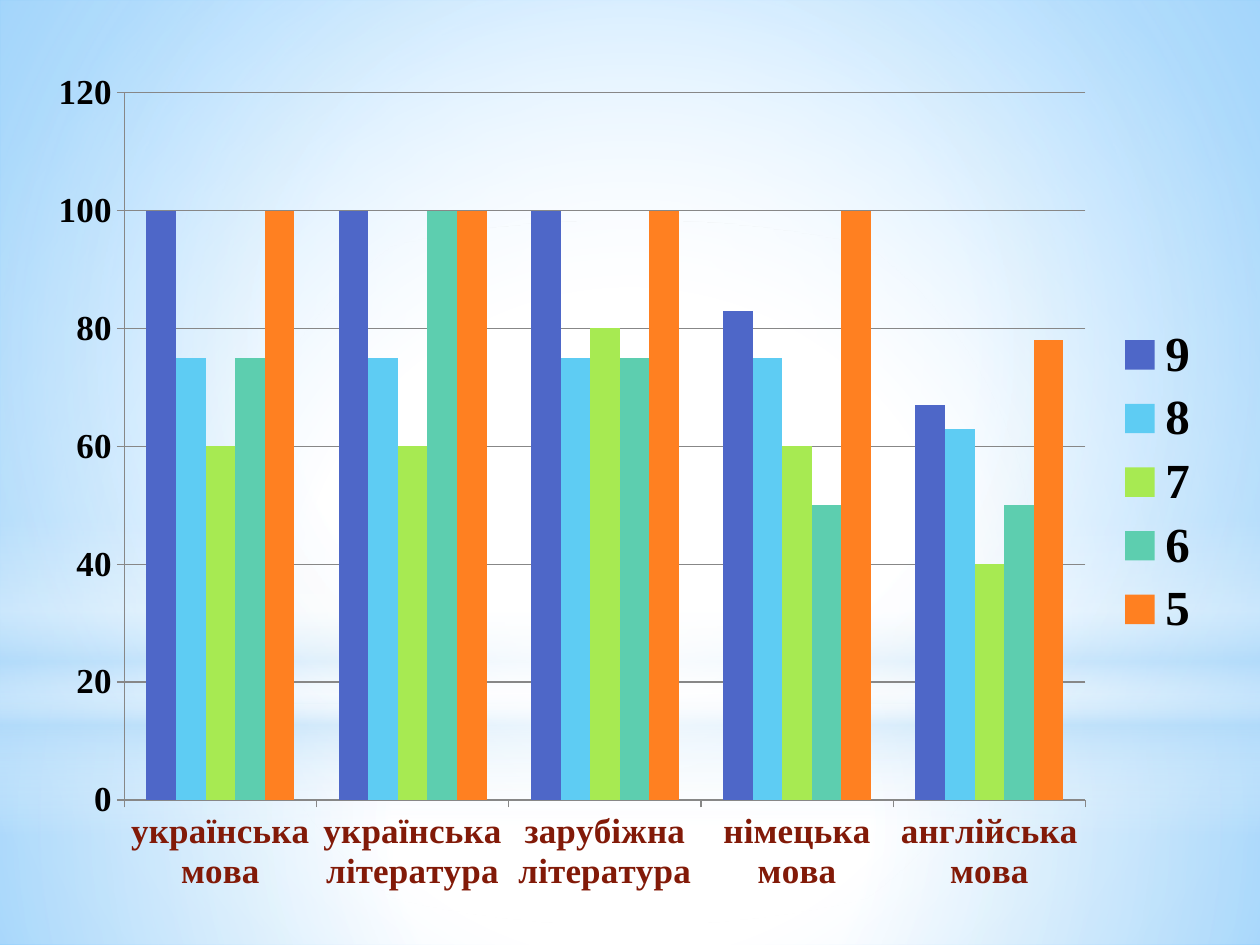
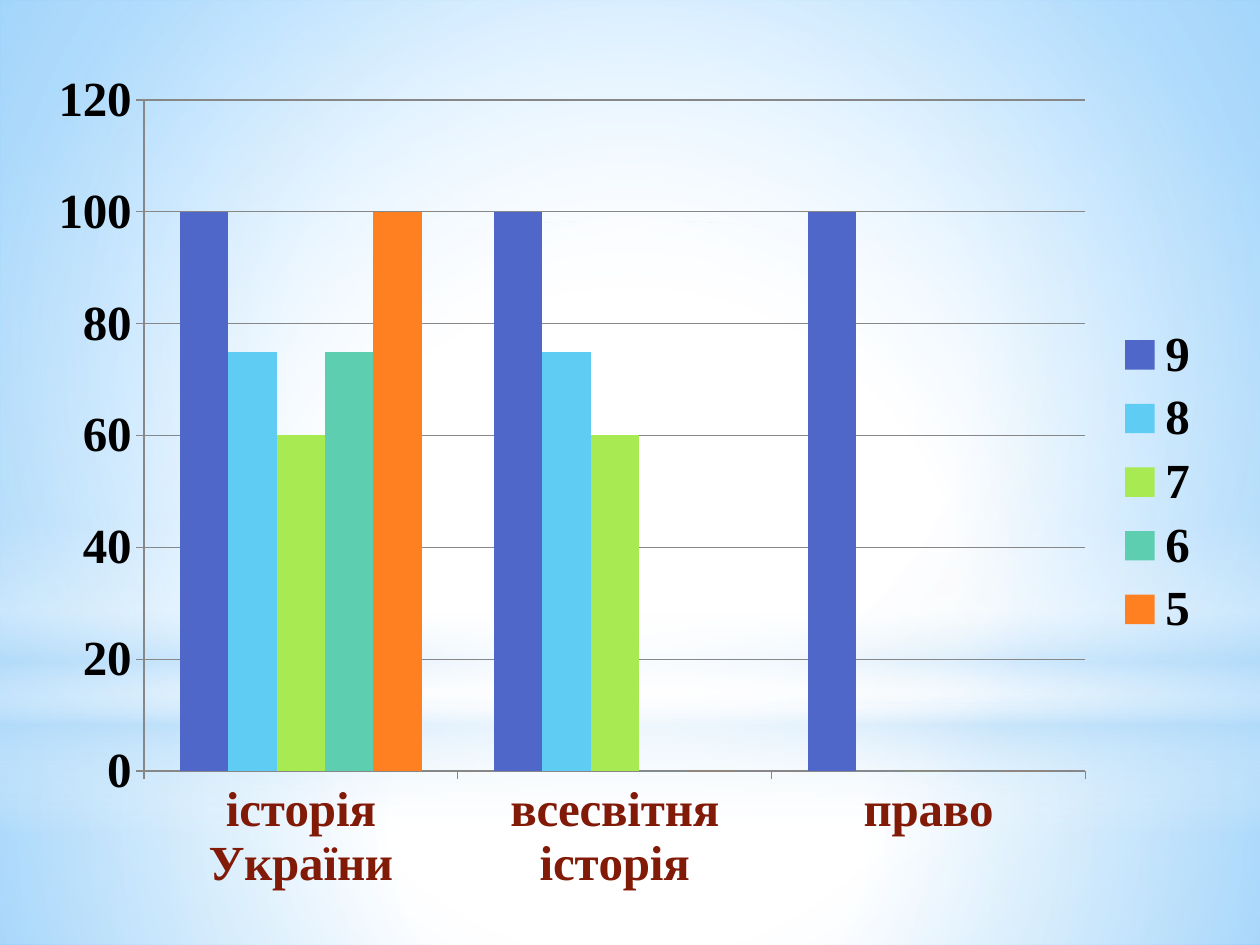
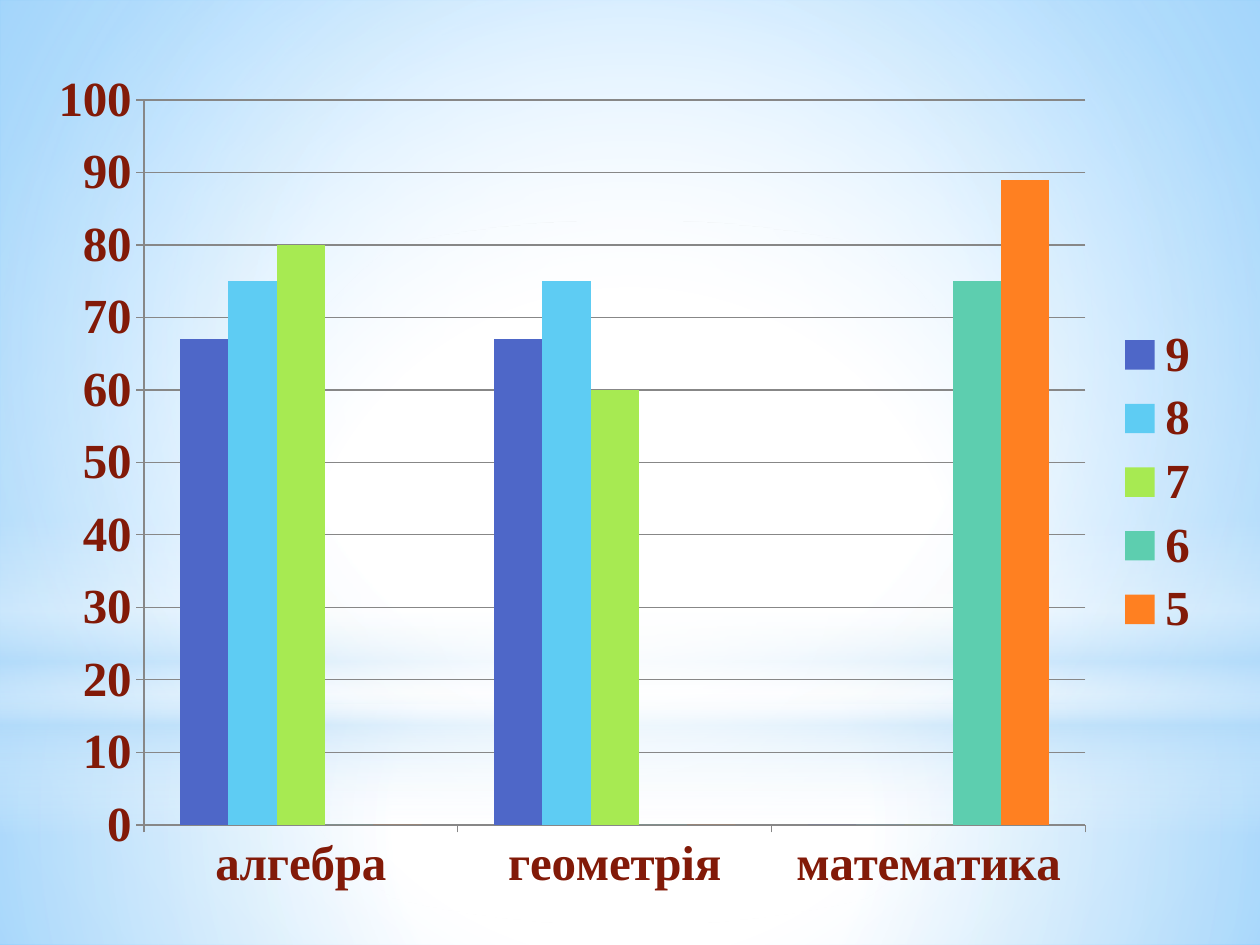
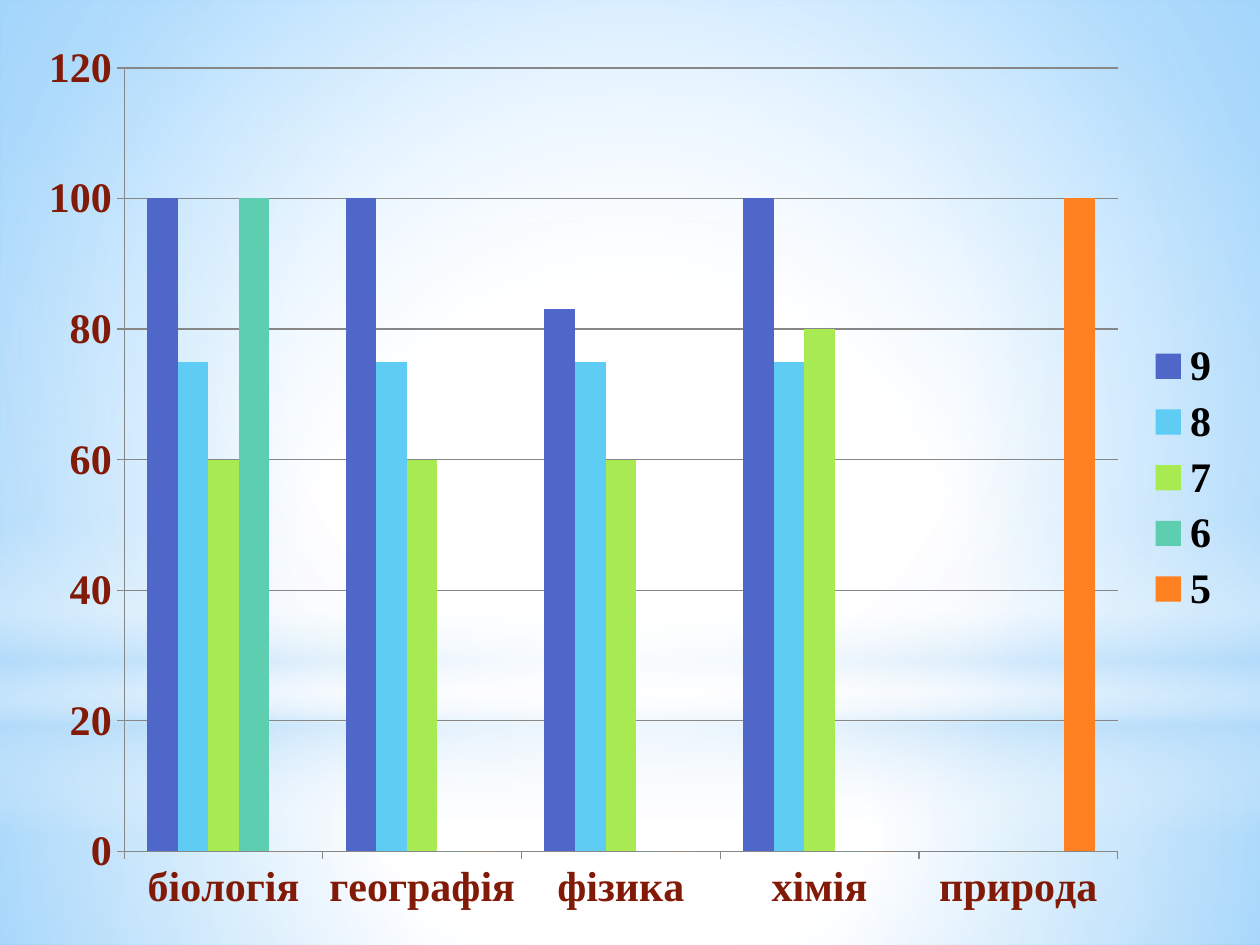
"""Build four slides of clustered column charts, one per group of school subjects."""
from dataclasses import dataclass

from pptx import Presentation
from pptx.chart.data import CategoryChartData
from pptx.dml.color import RGBColor
from pptx.enum.chart import XL_CHART_TYPE, XL_LEGEND_POSITION, XL_TICK_MARK
from pptx.enum.shapes import MSO_SHAPE
from pptx.oxml import parse_xml
from pptx.oxml.ns import nsdecls, qn
from pptx.util import Pt


@dataclass(frozen=True)
class Theme:
    """Colours, font and type sizes shared by all slides."""

    white: str = "FFFFFF"
    sky: str = "63BCFF"
    haze: str = "B4DCFA"
    black: str = "000000"
    maroon: str = "821A08"
    rule: str = "878787"
    font: str = "Times New Roman"
    small: int = 20
    medium: int = 24
    large: int = 28


THEME = Theme()
SLIDE_SIZE = (720, 540)
CENTRE = (50, 50, 50, 50)
GRADES = {"9": "4E67C8", "8": "5ECCF3", "7": "A7EA52", "6": "5DCEAF", "5": "FF8021"}

BACKGROUND = {
    "stops": [(0, THEME.white, 100), (42, THEME.white, 100), (100, THEME.sky, 100)],
    "focus": (24, 44, 24, 12),
}
BANDS = [
    {"shape": MSO_SHAPE.RECTANGLE, "top": 402, "height": 138, "focus": CENTRE,
     "stops": [(0, THEME.white, 91), (37, THEME.white, 76), (100, THEME.haze, 79)]},
    {"shape": MSO_SHAPE.RECTANGLE, "top": 0, "height": 402, "focus": CENTRE,
     "stops": [(0, THEME.white, 89), (48, THEME.white, 62), (100, THEME.haze, 79)]},
    {"shape": MSO_SHAPE.RECTANGLE, "top": 297, "height": 180, "focus": None,
     "stops": [(0, THEME.white, 0), (29, THEME.white, 30), (45, THEME.haze, 40),
               (55, THEME.white, 26), (65, THEME.haze, 60), (100, THEME.white, 0)]},
    {"shape": MSO_SHAPE.OVAL, "top": 126, "height": 402, "focus": CENTRE,
     "stops": [(0, THEME.white, 100), (56, THEME.white, 0)]},
]

STANDARD_FRAME = (20, 32, 675, 487)
WIDE_FRAME = (14, 15, 692, 516)
CHARTS = [
    {
        "frame": STANDARD_FRAME,
        "category": (THEME.small, THEME.maroon),
        "value": (THEME.small, THEME.black),
        "legend": (THEME.large, THEME.black),
        "subjects": {
            "українська мова": (100, 75, 60, 75, 100),
            "українська література": (100, 75, 60, 100, 100),
            "зарубіжна література": (100, 75, 80, 75, 100),
            "німецька мова": (83, 75, 60, 50, 100),
            "англійська мова": (67, 63, 40, 50, 78),
        },
    },
    {
        "frame": STANDARD_FRAME,
        "category": (THEME.large, THEME.maroon),
        "value": (THEME.large, THEME.black),
        "legend": (THEME.large, THEME.black),
        "subjects": {
            "історія України": (100, 75, 60, 75, 100),
            "всесвітня історія": (100, 75, 60, 0, 0),
            "право": (100, 0, 0, 0, 0),
        },
    },
    {
        "frame": STANDARD_FRAME,
        "category": (THEME.large, THEME.maroon),
        "value": (THEME.large, THEME.maroon),
        "legend": (THEME.large, THEME.maroon),
        "subjects": {
            "алгебра": (67, 75, 80, 0, 0),
            "геометрія": (67, 75, 60, 0, 0),
            "математика": (0, 0, 0, 75, 89),
        },
    },
    {
        "frame": WIDE_FRAME,
        "category": (THEME.medium, THEME.maroon),
        "value": (THEME.medium, THEME.maroon),
        "legend": (THEME.medium, THEME.black),
        "subjects": {
            "біологія": (100, 75, 60, 100, 0),
            "географія": (100, 75, 60, 0, 0),
            "фізика": (83, 75, 60, 0, 0),
            "хімія": (100, 75, 80, 0, 0),
            "природа": (0, 0, 0, 0, 100),
        },
    },
]


def paint_gradient(fill, element, stops, focus):
    """Fill with a circular gradient, or a downward one when there is no focus."""
    fill.solid()
    stop_xml = "".join(
        f'<a:gs pos="{position * 1000}"><a:srgbClr val="{color}">'
        f'<a:alpha val="{opacity * 1000}"/></a:srgbClr></a:gs>'
        for position, color, opacity in stops
    )
    if focus:
        sides = " ".join(f'{side}="{inset * 1000}"' for side, inset in zip("ltrb", focus))
        direction = f'<a:path path="circle"><a:fillToRect {sides}/></a:path>'
    else:
        direction = '<a:lin ang="5400000" scaled="0"/>'
    gradient = parse_xml(
        f'<a:gradFill {nsdecls("a")} rotWithShape="1">'
        f"<a:gsLst>{stop_xml}</a:gsLst>{direction}</a:gradFill>"
    )
    solid = next(element.iter(qn("a:solidFill")))
    solid.getparent().replace(solid, gradient)


def decorate_master(deck, page):
    """Paint the background and move the bands from a page to the master."""
    master = deck.slide_master
    content = master.element.cSld
    paint_gradient(master.background.fill, content, **BACKGROUND)
    for order, band in enumerate(BANDS):
        box = page.shapes.add_shape(
            band["shape"], 0, Pt(band["top"]), deck.slide_width, Pt(band["height"])
        )
        box.shadow.inherit = False
        paint_gradient(box.fill, box.element, band["stops"], band["focus"])
        box.line.fill.background()
        label = box.element.nvSpPr.cNvPr
        label.set("id", str(100 + order))
        label.set("name", f"Band {order + 1}")
        content.spTree.insert(2 + order, box.element)


def set_font(font, size, color):
    """Apply the shared bold face with a size and a colour."""
    for name, value in {"name": THEME.font, "bold": True, "size": Pt(size)}.items():
        setattr(font, name, value)
    font.color.rgb = RGBColor.from_string(color)


def set_rule(line):
    """Draw an axis or grid line in the shared grey."""
    line.color.rgb = RGBColor.from_string(THEME.rule)
    line.width = Pt(0.75)


def add_grade_chart(page, content):
    """Add a column chart with one series per grade."""
    subjects = content["subjects"]
    data = CategoryChartData()
    data.categories = list(subjects)
    for grade, values in zip(GRADES, zip(*subjects.values())):
        data.add_series(grade, values)
    frame = page.shapes.add_chart(
        XL_CHART_TYPE.COLUMN_CLUSTERED, *map(Pt, content["frame"]), data
    )
    chart = frame.chart
    chart.has_title = False
    set_font(chart.font, *content["value"])

    chart.has_legend = True
    chart.legend.position = XL_LEGEND_POSITION.RIGHT
    chart.legend.include_in_layout = False
    set_font(chart.legend.font, *content["legend"])

    for axis, role in ((chart.category_axis, "category"), (chart.value_axis, "value")):
        axis.major_tick_mark = XL_TICK_MARK.OUTSIDE
        axis.minor_tick_mark = XL_TICK_MARK.NONE
        axis.has_major_gridlines = role == "value"
        set_rule(axis.format.line)
        set_font(axis.tick_labels.font, *content[role])
    set_rule(chart.value_axis.major_gridlines.format.line)

    plot = chart.plots[0]
    for name, value in {"gap_width": 150, "overlap": 0, "vary_by_categories": False}.items():
        setattr(plot, name, value)
    for series, color in zip(plot.series, GRADES.values()):
        series.format.fill.solid()
        series.format.fill.fore_color.rgb = RGBColor.from_string(color)


def main():
    """Create and save the deck."""
    deck = Presentation()
    deck.slide_width, deck.slide_height = map(Pt, SLIDE_SIZE)
    pages = [deck.slides.add_slide(deck.slide_layouts[6]) for _ in CHARTS]
    decorate_master(deck, pages[0])
    for page, content in zip(pages, CHARTS):
        add_grade_chart(page, content)
    deck.save("out.pptx")


if __name__ == "__main__":
    main()
